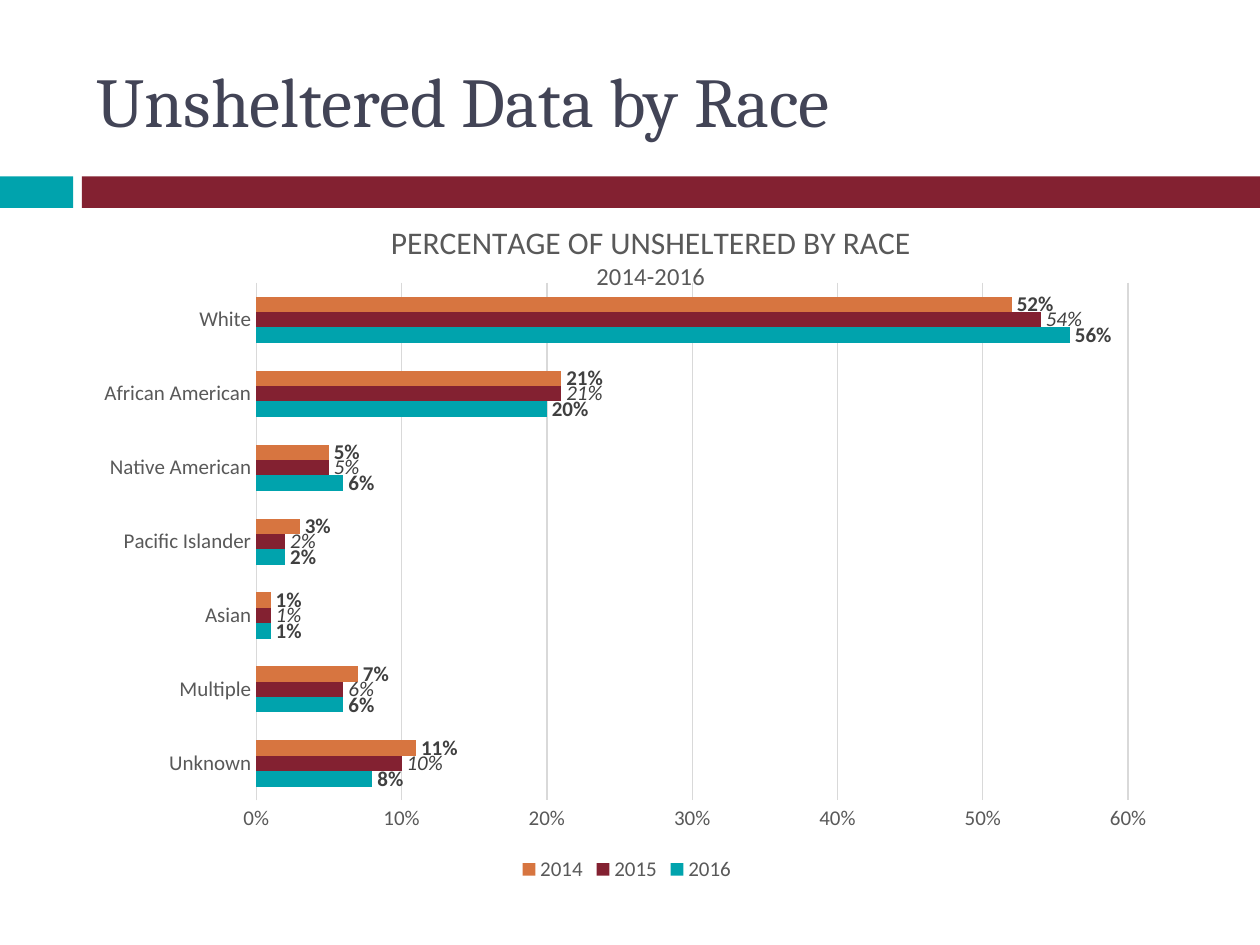
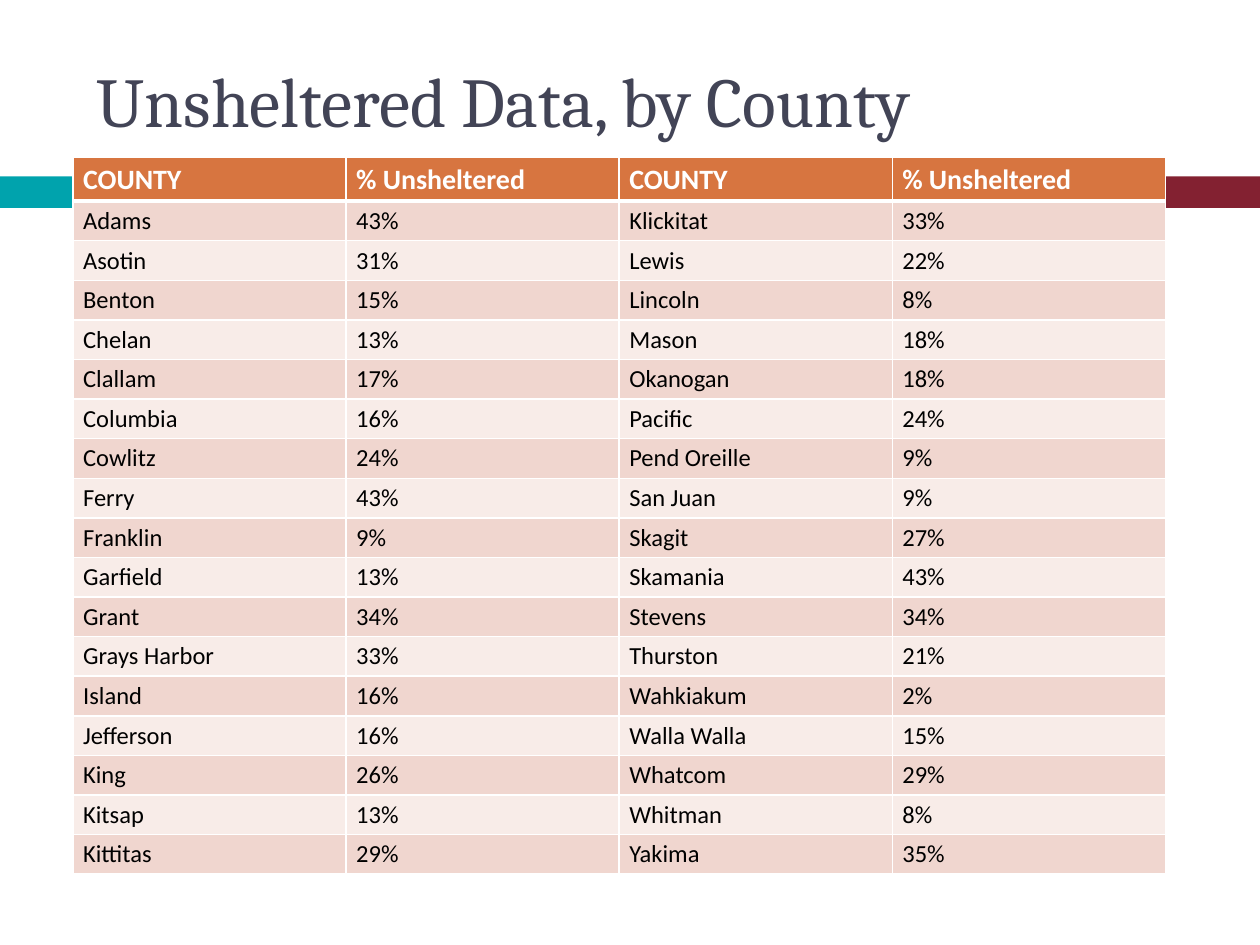
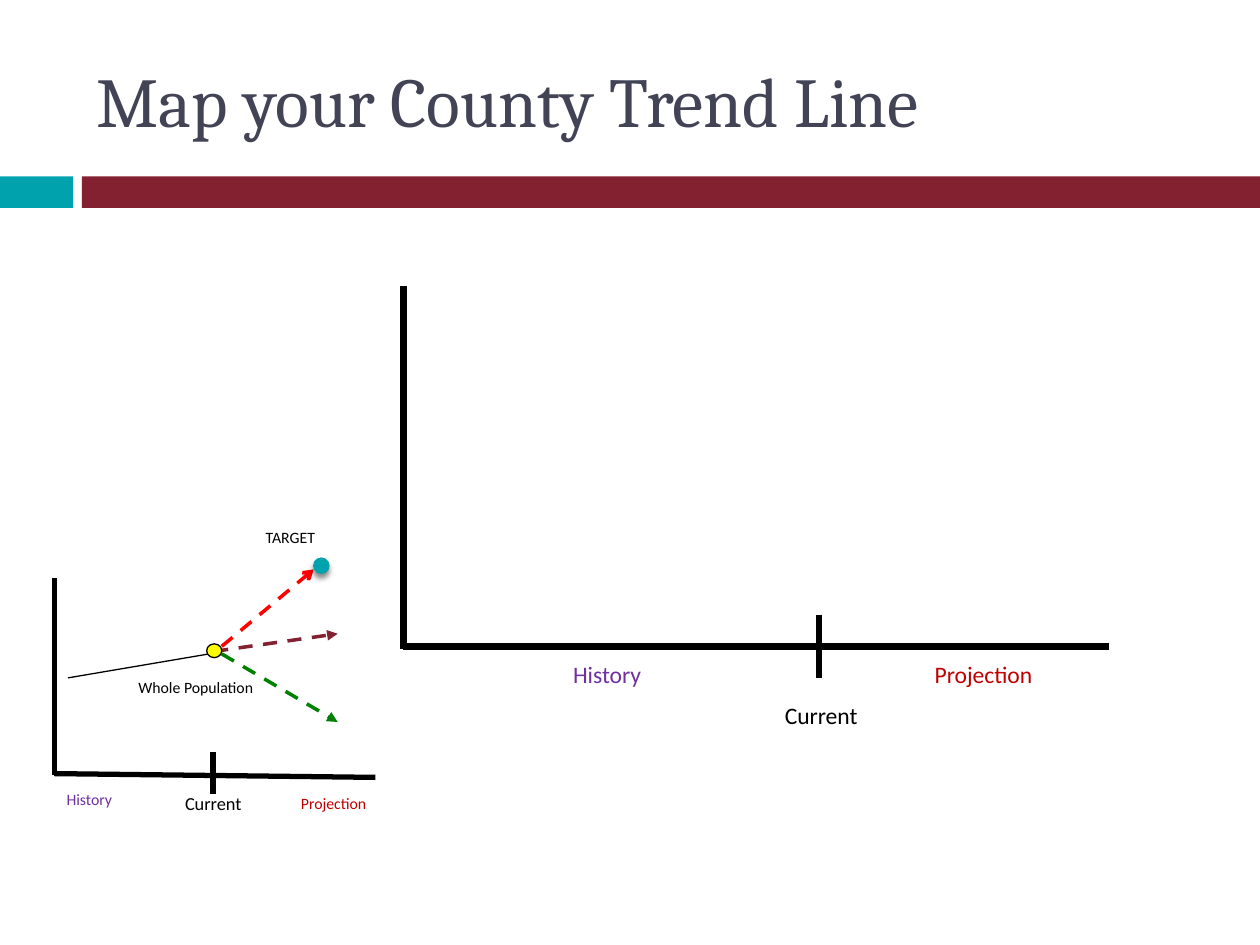
from lxml import etree
from pptx import Presentation
from pptx.chart.data import CategoryChartData
from pptx.dml.color import RGBColor
from pptx.enum.chart import XL_CHART_TYPE as CT, XL_LABEL_POSITION as LP
from pptx.enum.chart import XL_LEGEND_POSITION as LEG, XL_TICK_MARK as TM
from pptx.enum.dml import MSO_LINE
from pptx.enum.shapes import MSO_CONNECTOR as CN, MSO_SHAPE as SH
from pptx.enum.text import MSO_ANCHOR as ANC
from pptx.oxml import parse_xml
from pptx.oxml.ns import nsdecls, qn
from pptx.util import Inches, Pt

rgb = RGBColor.from_string
TEAL, MAROON, ORANGE = "00A3AD", "832131", "D77540"
BLACK, WHITE, GREY, RULE = "000000", "FFFFFF", "595959", "D9D9D9"
PURPLE, RED = "7030A0", "C00000"


def set_font(font, size, color, name="Calibri", **extra):
    for key, value in dict(size=Pt(size), name=name, **extra).items():
        setattr(font, key, value)
    font.color.rgb = rgb(color)


def add_text(s, box, text, size, color, name="Calibri", anchor=ANC.TOP):
    tf = s.shapes.add_textbox(*map(Inches, box)).text_frame
    tf.word_wrap = True
    tf.vertical_anchor = anchor
    r = tf.paragraphs[0].add_run()
    r.text = text
    set_font(r.font, size, color, name)


prs = Presentation()
prs.slide_width, prs.slide_height = Inches(10), Inches(7.5)

slides = []
for title in ("Unsheltered Data by Race", "Unsheltered Data, by County", "Map your County Trend Line"):
    s = prs.slides.add_slide(prs.slide_layouts[6])
    for x, w, color in ((0, 0.58, TEAL), (0.65, 9.35, MAROON)):
        band = s.shapes.add_shape(SH.RECTANGLE, Inches(x), Inches(1.4), Inches(w), Inches(0.25))
        band.shadow.inherit = False
        band.fill.solid()
        band.fill.fore_color.rgb = rgb(color)
        band.line.fill.background()
    add_text(s, (0.67, 0.25, 8.92, 1.08), title, 40, "424456", "Cambria", ANC.MIDDLE)
    slides.append(s)
race, county, trend = slides

data = CategoryChartData(number_format="0%")
data.categories = ["Unknown", "Multiple", "Asian", "Pacific Islander",
                   "Native American", "African American", "White"]
years = (
    ("2016", (0.08, 0.06, 0.01, 0.02, 0.06, 0.2, 0.56), TEAL, dict(bold=True)),
    ("2015", (0.1, 0.06, 0.01, 0.02, 0.05, 0.21, 0.54), MAROON, dict(bold=False, italic=True)),
    ("2014", (0.11, 0.07, 0.01, 0.03, 0.05, 0.21, 0.52), ORANGE, dict(bold=True)),
)
for year, values, color, style in years:
    data.add_series(year, values)
chart = race.shapes.add_chart(CT.BAR_CLUSTERED, Inches(0.65), Inches(1.33),
                              Inches(8.65), Inches(5.71), data).chart
set_font(chart.font, 10, BLACK)

tf = chart.chart_title.text_frame
for i, (text, size) in enumerate((("PERCENTAGE OF UNSHELTERED BY RACE", 18), ("2014-2016", 14))):
    p = tf.add_paragraph() if i else tf.paragraphs[0]
    r = p.add_run()
    r.text = text
    set_font(r.font, size, GREY, bold=False)

plot = chart.plots[0]
plot.gap_width, plot.overlap, plot.vary_by_categories = 182, 0, False
for ser, (year, values, color, style) in zip(plot.series, years):
    ser.format.fill.solid()
    ser.format.fill.fore_color.rgb = rgb(color)
    labels = ser.data_labels
    for key, value in dict(show_value=True, position=LP.OUTSIDE_END, number_format="0%",
                           number_format_is_linked=False).items():
        setattr(labels, key, value)
    set_font(labels.font, 12, "404040", **style)

cat, val = chart.category_axis, chart.value_axis
for axis in (cat, val):
    axis.major_tick_mark = axis.minor_tick_mark = TM.NONE
    set_font(axis.tick_labels.font, 12, GREY)
cat.has_major_gridlines = False
val.has_major_gridlines = True
val.minimum_scale, val.maximum_scale, val.major_unit = 0, 0.6, 0.1
val.tick_labels.number_format = "0%"
val.tick_labels.number_format_is_linked = False
val.format.line.fill.background()
for line in (cat.format.line, val.major_gridlines.format.line):
    line.color.rgb = rgb(RULE)
    line.width = Pt(0.75)

chart.has_legend = True
chart.legend.position = LEG.BOTTOM
chart.legend.include_in_layout = False
set_font(chart.legend.font, 12, GREY)

plot_area = chart._chartSpace.find(".//" + qn("c:plotArea"))
for parent, index, layout in (
    (plot_area, 0, dict(layoutTarget="inner", xMode="edge", yMode="edge", x=0.16, y=0.16, w=0.8, h=0.72)),
    (chart.chart_title._element, 1, dict(xMode="edge", yMode="edge", x=0.28, y=0.07)),
):
    for old in parent.findall(qn("c:layout")):
        parent.remove(old)
    tags = "".join(f'<c:{tag} val="{value}"/>' for tag, value in layout.items())
    parent.insert(index, parse_xml(
        f'<c:layout {nsdecls("c")}><c:manualLayout>{tags}</c:manualLayout></c:layout>'))

rows = [
    ("COUNTY", "% Unsheltered", "COUNTY", "% Unsheltered"),
    ("Adams", "43%", "Klickitat", "33%"),
    ("Asotin", "31%", "Lewis", "22%"),
    ("Benton", "15%", "Lincoln", "8%"),
    ("Chelan", "13%", "Mason", "18%"),
    ("Clallam", "17%", "Okanogan", "18%"),
    ("Columbia", "16%", "Pacific", "24%"),
    ("Cowlitz", "24%", "Pend Oreille", "9%"),
    ("Ferry", "43%", "San Juan", "9%"),
    ("Franklin", "9%", "Skagit", "27%"),
    ("Garfield", "13%", "Skamania", "43%"),
    ("Grant", "34%", "Stevens", "34%"),
    ("Grays Harbor", "33%", "Thurston", "21%"),
    ("Island", "16%", "Wahkiakum", "2%"),
    ("Jefferson", "16%", "Walla Walla", "15%"),
    ("King", "26%", "Whatcom", "29%"),
    ("Kitsap", "13%", "Whitman", "8%"),
    ("Kittitas", "29%", "Yakima", "35%"),
]
table = county.shapes.add_table(len(rows), 4, Inches(0.58), Inches(1.25),
                                Inches(8.67), Inches(5.66)).table
for i, row in enumerate(rows):
    for j, text in enumerate(row):
        cell = table.cell(i, j)
        for side in ("left", "right", "top", "bottom"):
            setattr(cell, f"margin_{side}", Inches(0.08 if side in ("left", "right") else 0.04))
        for side in "LRTB":
            thick = (i, side) in ((0, "B"), (1, "T"))
            cell._tc.get_or_add_tcPr().append(parse_xml(
                f'<a:ln{side} {nsdecls("a")} w="{Pt(3 if thick else 1)}"><a:solidFill>'
                f'<a:srgbClr val="{WHITE}"/></a:solidFill></a:ln{side}>'))
        cell.fill.solid()
        cell.fill.fore_color.rgb = rgb(ORANGE if i == 0 else "F0D6CF" if i % 2 else "F8ECE8")
        r = cell.text_frame.paragraphs[0].add_run()
        r.text = text
        set_font(r.font, 14 if i else 16, BLACK if i else WHITE, bold=i == 0)

for x1, y1, x2, y2, color, width, head in (
    (1.76, 5.13, 2.49, 4.52, "FF0000", 2, "arrow"),
    (1.7, 5.17, 2.68, 5.03, MAROON, 2, "triangle"),
    (1.76, 5.19, 2.68, 5.73, "008000", 2, "triangle"),
    (1.69, 5.97, 1.69, 6.3, BLACK, 3, None),
    (0.43, 6.14, 2.98, 6.17, BLACK, 3, None),
    (0.43, 4.59, 0.43, 6.15, BLACK, 3, None),
    (0.54, 5.38, 1.66, 5.19, BLACK, 0.75, None),
    (3.2, 5.13, 8.8, 5.13, BLACK, 4, None),
    (6.5, 4.88, 6.5, 5.38, BLACK, 3, None),
    (3.2, 2.27, 3.2, 5.15, BLACK, 4, None),
):
    line = trend.shapes.add_connector(CN.STRAIGHT, *map(Inches, (x1, y1, x2, y2)))
    line.line.color.rgb = rgb(color)
    line.line.width = Pt(width)
    if head:
        line.line.dash_style = MSO_LINE.DASH
        etree.SubElement(line.line._get_or_add_ln(), qn("a:tailEnd"), type=head)
    etree.SubElement(line._element.spPr, qn("a:effectLst"))

for x, y, w, h, fill, edge, width in (
    (1.64, 5.11, 0.12, 0.11, "FFFF00", BLACK, 0.75),
    (2.49, 4.43, 0.12, 0.12, TEAL, TEAL, 0.79),
):
    dot = trend.shapes.add_shape(SH.OVAL, *map(Inches, (x, y, w, h)))
    dot.shadow.inherit = False
    dot.fill.solid()
    dot.fill.fore_color.rgb = rgb(fill)
    dot.line.color.rgb = rgb(edge)
    dot.line.width = Pt(width)
dot._element.spPr.find(qn("a:effectLst")).append(parse_xml(
    f'<a:outerShdw {nsdecls("a")} blurRad="{Pt(3)}" dist="{Pt(2.4)}" dir="5400000" rotWithShape="0">'
    f'<a:srgbClr val="{BLACK}"><a:alpha val="45000"/></a:srgbClr></a:outerShdw>'))

for box, text, size, color in (
    ((1.37, 6.24, 0.88, 0.28), "Current", 10.5, BLACK),
    ((0.43, 6.22, 0.74, 0.25), "History", 9, PURPLE),
    ((2.29, 6.25, 1.3, 0.25), "Projection", 9, RED),
    ((1, 5.33, 1.75, 0.25), "Whole Population", 9, BLACK),
    ((2.01, 4.14, 0.99, 0.25), "TARGET", 9, BLACK),
    ((6.13, 5.51, 0.88, 0.33), "Current", 13.5, BLACK),
    ((4.45, 5.19, 0.81, 0.33), "History", 13.5, PURPLE),
    ((7.32, 5.19, 1.11, 0.33), "Projection", 13.5, RED),
):
    add_text(trend, box, text, size, color)

prs.save("out.pptx")
